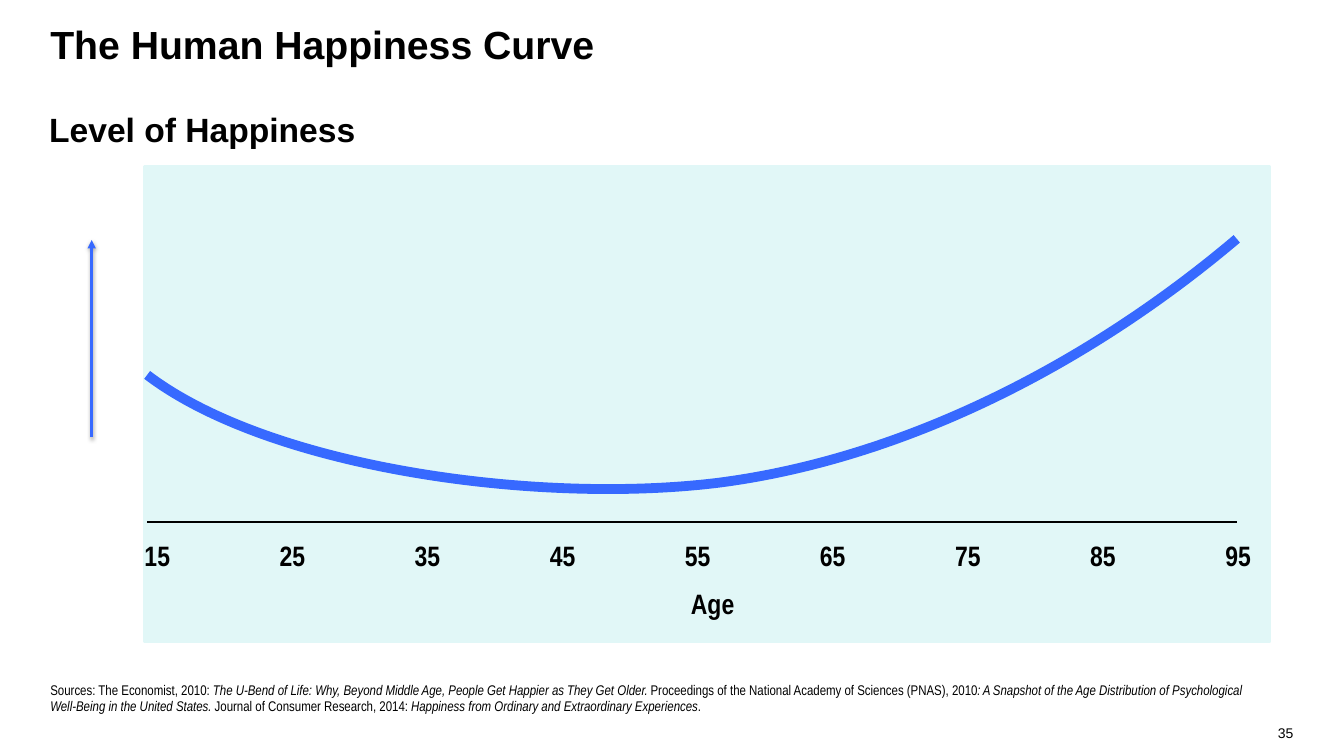
from dataclasses import dataclass
from typing import NamedTuple

from lxml import etree
from pptx import Presentation
from pptx.dml.color import RGBColor
from pptx.enum.shapes import MSO_CONNECTOR, MSO_SHAPE
from pptx.enum.text import MSO_ANCHOR, PP_ALIGN
from pptx.oxml.ns import qn
from pptx.util import Pt

STRAIGHT = MSO_CONNECTOR.STRAIGHT
RECTANGLE = MSO_SHAPE.RECTANGLE
TOP, BOTTOM = MSO_ANCHOR.TOP, MSO_ANCHOR.BOTTOM
LEFT, CENTER, RIGHT = PP_ALIGN.LEFT, PP_ALIGN.CENTER, PP_ALIGN.RIGHT


@dataclass(frozen=True)
class Theme:
    ink: RGBColor = RGBColor(0x00, 0x00, 0x00)
    panel: RGBColor = RGBColor(0xE1, 0xF7, 0xF7)
    accent: RGBColor = RGBColor(0x37, 0x69, 0xFF)
    wide: str = "Arial"
    narrow: str = "Arial Narrow"
    title: int = 28
    heading: int = 24
    axis: int = 20
    small: int = 10


class Box(NamedTuple):
    left: float
    top: float
    width: float
    height: float


class Point(NamedTuple):
    x: float
    y: float


class Bend(NamedTuple):
    first_control: Point
    second_control: Point
    end: Point


class Phrase(NamedTuple):
    text: str
    italic: bool = False


class Shadow(NamedTuple):
    blur: float
    distance: float
    degrees: int
    opacity: int


THEME = Theme()
PANEL = Box(103, 118.8, 804.2, 339.8)
FIRST_AGE = Box(81.4, 380.9, 61.9, 31)
AGE_PITCH = 96.5
AGES = range(15, 96, 10)
CURVE_START = Point(105.1, 267.8)
CURVE_BENDS = [
    Bend(Point(192.2, 334.1), Point(383, 360.7), Point(512.6, 344.9)),
    Bend(Point(643, 328.3), Point(775.4, 262.1), Point(883.4, 170.6)),
]
ARROW_SHADOW = Shadow(3.1, 1.6, 90, 38)
SOURCES = [
    Phrase("Sources: The Economist, 2010: "),
    Phrase("The U-Bend of Life: Why, Beyond Middle Age, People Get Happier as They Get Older.", True),
    Phrase(" Proceedings of the National Academy of Sciences (PNAS), 2010"),
    Phrase(": A Snapshot of the Age Distribution of Psychological Well-Being in the United States.", True),
    Phrase(" Journal of Consumer Research, 2014: "),
    Phrase("Happiness from Ordinary and Extraordinary Experiences", True),
    Phrase("."),
]


def add_text(shapes, box: Box, phrases: list[Phrase], *, size: int, font: str = THEME.wide,
             bold: bool = False, align=LEFT, anchor=TOP, inset: bool = True,
             wrap: bool = True, space_after: float = 0) -> None:
    frame = shapes.add_textbox(*map(Pt, box)).text_frame
    frame.word_wrap = wrap
    frame.vertical_anchor = anchor
    if not inset:
        frame.margin_left = frame.margin_right = frame.margin_top = frame.margin_bottom = 0
    paragraph = frame.paragraphs[0]
    paragraph.alignment = align
    paragraph.space_after = Pt(space_after)
    for phrase in phrases:
        run = paragraph.add_run()
        run.text = phrase.text
        run.font.name = font
        run.font.size = Pt(size)
        run.font.bold = bold
        run.font.italic = phrase.italic
        run.font.color.rgb = THEME.ink


def add_panel(shapes, box: Box) -> None:
    panel = shapes.add_shape(RECTANGLE, *map(Pt, box))
    panel.shadow.inherit = False
    panel.fill.solid()
    panel.fill.fore_color.rgb = THEME.panel
    panel.line.color.rgb = THEME.panel
    panel.line.width = Pt(2)


def add_line(shapes, start: Point, end: Point, color: RGBColor, width: float,
             arrow: bool = False, shadow: Shadow | None = None) -> None:
    line = shapes.add_connector(STRAIGHT, *map(Pt, (*start, *end)))
    line.line.color.rgb = color
    line.line.width = Pt(width)
    if arrow:
        etree.SubElement(line.line._get_or_add_ln(), qn("a:tailEnd"), type="triangle")
    effects = etree.SubElement(line._element.spPr, qn("a:effectLst"))
    if shadow:
        outer = etree.SubElement(
            effects, qn("a:outerShdw"), blurRad=str(Pt(shadow.blur)),
            dist=str(Pt(shadow.distance)), dir=str(shadow.degrees * 60000), rotWithShape="0")
        black = etree.SubElement(outer, qn("a:srgbClr"), val=str(THEME.ink))
        etree.SubElement(black, qn("a:alpha"), val=str(shadow.opacity * 1000))


def add_curve(shapes, start: Point, bends: list[Bend], color: RGBColor, width: float) -> None:
    builder = shapes.build_freeform(*map(Pt, start))
    builder.add_line_segments([tuple(map(Pt, bend.end)) for bend in bends], close=False)
    curve = builder.convert_to_shape()
    curve.shadow.inherit = False
    curve.fill.background()
    curve.line.color.rgb = color
    curve.line.width = Pt(width)
    for segment, bend in zip(list(curve._element.iter(qn("a:lnTo"))), bends):
        cubic = etree.Element(qn("a:cubicBezTo"))
        for point in bend:
            etree.SubElement(cubic, qn("a:pt"), x=str(Pt(point.x) - curve.left),
                             y=str(Pt(point.y) - curve.top))
        segment.getparent().replace(segment, cubic)


def main() -> None:
    deck = Presentation()
    deck.slide_width, deck.slide_height = Pt(960), Pt(540)
    shapes = deck.slides.add_slide(deck.slide_layouts[6]).shapes

    add_panel(shapes, PANEL)
    add_text(shapes, Box(895, 514.8, 28.8, 14.4), [Phrase("35")], size=THEME.small,
             align=RIGHT, anchor=BOTTOM, inset=False)
    add_text(shapes, Box(36, 14.4, 705.6, 57.6), [Phrase("The Human Happiness Curve")],
             size=THEME.title, bold=True, inset=False)
    add_text(shapes, Box(463.7, 415.4, 90.7, 31.7), [Phrase("Age")], size=THEME.axis,
             font=THEME.narrow, bold=True, align=CENTER, space_after=1.5)
    add_line(shapes, Point(105.1, 373), Point(883.4, 373), THEME.ink, 1)
    add_curve(shapes, CURVE_START, CURVE_BENDS, THEME.accent, 7)

    age_labels = shapes.add_group_shape().shapes
    for index, age in enumerate(AGES):
        label = FIRST_AGE._replace(left=FIRST_AGE.left + index * AGE_PITCH)
        add_text(age_labels, label, [Phrase(str(age))], size=THEME.axis,
                 font=THEME.narrow, bold=True, align=CENTER)

    add_text(shapes, Box(28.1, 74.2, 235.4, 36), [Phrase("Level of Happiness")],
             size=THEME.heading, bold=True, wrap=False)
    add_text(shapes, Box(36, 486, 852.5, 24.5), SOURCES, size=THEME.small,
             font=THEME.narrow, anchor=BOTTOM, inset=False, space_after=1.5)
    add_line(shapes, Point(65.5, 312.5), Point(65.5, 171.4), THEME.accent, 2,
             arrow=True, shadow=ARROW_SHADOW)

    deck.save("out.pptx")


if __name__ == "__main__":
    main()
